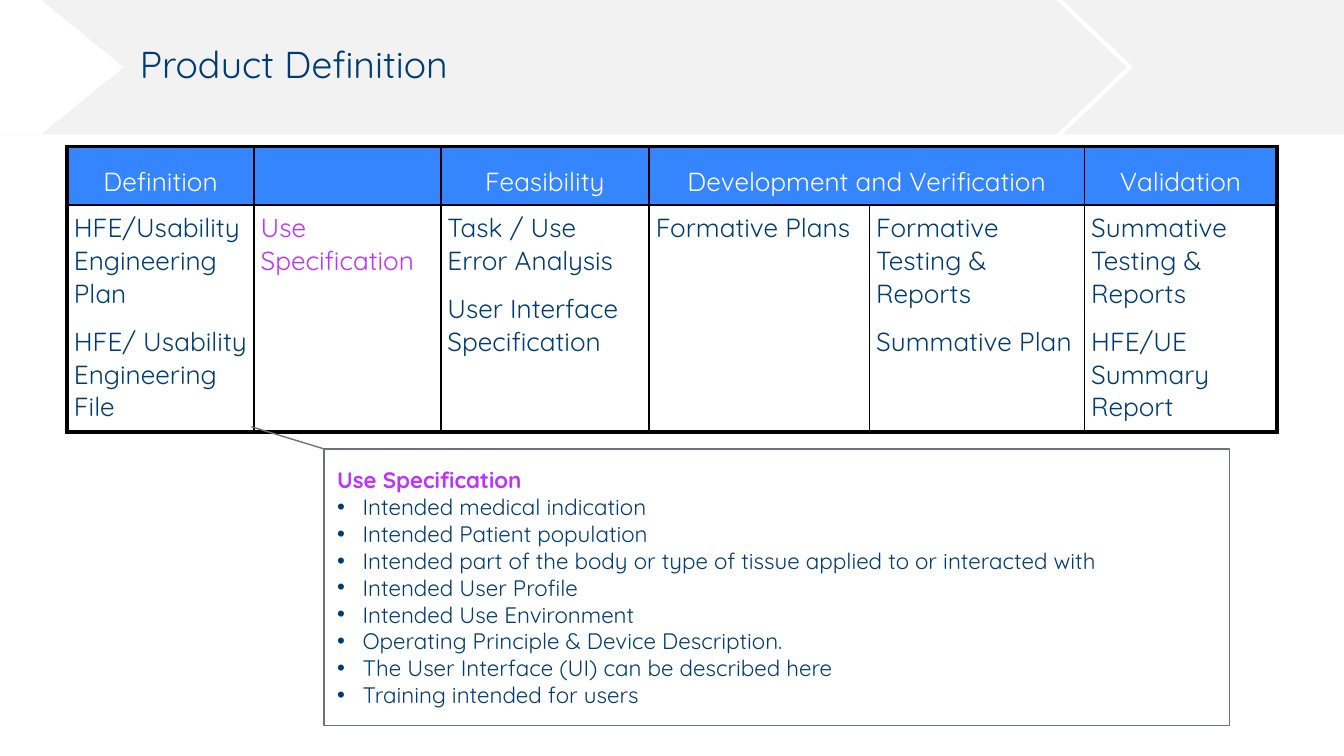
from lxml.etree import SubElement
from pptx import Presentation
from pptx.dml.color import RGBColor
from pptx.enum.shapes import MSO_SHAPE
from pptx.enum.text import MSO_ANCHOR, MSO_AUTO_SIZE, PP_ALIGN
from pptx.oxml import parse_xml
from pptx.oxml.ns import nsdecls, qn
from pptx.util import Inches, Pt

NAVY = RGBColor(0x00, 0x3C, 0x71)
BLUE = RGBColor(0x34, 0x85, 0xFE)
PURPLE = RGBColor(0xBB, 0x33, 0xFF)
GRAY = RGBColor(0x6A, 0x73, 0x7B)
PALE = RGBColor(0xF2, 0xF2, 0xF2)
WHITE = RGBColor(0xFF, 0xFF, 0xFF)
FONT = "Quicksand"

TITLE = "Product Definition"
BANNER = [
    (MSO_SHAPE.RECTANGLE, 0, 10, PALE, []),
    (MSO_SHAPE.CHEVRON, 7.86, 0.57, WHITE, [0.92]),
    (MSO_SHAPE.PENTAGON, 0, 0.92, WHITE, [0.67]),
]
PHASES = [
    (1.39, "Definition", ["HFE/Usability Engineering Plan",
                          "HFE/ Usability Engineering File"]),
    (1.39, "", ["Use Specification"]),
    (1.55, "Feasibility", ["Task / Use Error Analysis",
                           "User Interface Specification"]),
    (1.64, "Development and Verification", ["Formative Plans"]),
    (1.6, "", ["Formative Testing & Reports", "Summative Plan"]),
    (1.43, "Validation", ["Summative Testing & Reports",
                          "HFE/UE Summary Report"]),
]
FOCUS = "Use Specification"
POINTS = [
    "Intended medical indication",
    "Intended Patient population",
    "Intended part of the body or type of tissue applied to or interacted with",
    "Intended User Profile",
    "Intended Use Environment",
    "Operating Principle & Device Description.",
    "The User Interface (UI) can be described here",
    "Training intended for users",
]


def style(para, size, color, bold=False):
    for font in [run.font for run in para.runs] or [para.font]:
        font.name, font.size, font.bold = FONT, Pt(size), bold
        font.color.rgb = color


def add_shape(slide, kind, box, fill, adjust):
    shape = slide.shapes.add_shape(kind, *map(Inches, box))
    shape.shadow.inherit = False
    shape.fill.solid()
    shape.fill.fore_color.rgb = fill
    shape.line.fill.background()
    for i, value in enumerate(adjust):
        shape.adjustments[i] = value
    return shape


def add_edges(cell, row, col):
    props = cell._tc.get_or_add_tcPr()
    outer = [col == 0, col == len(PHASES) - 1, row == 0, row == 1]
    for i, (side, thick) in enumerate(zip("LRTB", outer)):
        width = Pt(2.25 if thick else 1)
        props.insert(i, parse_xml(
            f'<a:ln{side} {nsdecls("a")} w="{width}"><a:solidFill>'
            f'<a:srgbClr val="000000"/></a:solidFill></a:ln{side}>'))


def fill_cell(cell, row, col, lines):
    cell.margin_left = cell.margin_right = Inches(0.05)
    cell.margin_top = cell.margin_bottom = Inches(0.05)
    cell.fill.solid()
    cell.fill.fore_color.rgb = WHITE if row else BLUE
    add_edges(cell, row, col)
    cell.text_frame.text = "\n".join(lines)
    for para in cell.text_frame.paragraphs:
        if row:
            para.space_after = Pt(8.4)
            style(para, 14, PURPLE if para.text == FOCUS else NAVY)
        else:
            para.alignment = PP_ALIGN.CENTER
            para.line_spacing = Pt(24)
            style(para, 14, WHITE)


def add_title(slide):
    title = slide.shapes.title
    title.element.getparent().append(title.element)
    title.left, title.top = Inches(0.94), Inches(0.22)
    title.width, title.height = Inches(8.56), Inches(0.55)
    frame = title.text_frame
    frame.text = TITLE
    frame.auto_size = MSO_AUTO_SIZE.NONE
    frame.vertical_anchor = MSO_ANCHOR.MIDDLE
    para = frame.paragraphs[0]
    para.alignment, para.line_spacing = PP_ALIGN.LEFT, 0.9
    style(para, 20, NAVY)


def add_grid(slide):
    box = map(Inches, (0.5, 1.09, 9, 2.05))
    table = slide.shapes.add_table(2, len(PHASES), *box).table
    table.rows[0].height, table.rows[1].height = Inches(0.36), Inches(1.69)
    for col, (width, head, items) in enumerate(PHASES):
        table.columns[col].width = Inches(width)
        fill_cell(table.cell(0, col), 0, col, [head])
        fill_cell(table.cell(1, col), 1, col, items)
    table.cell(0, 3).merge(table.cell(0, 4))


def add_callout(slide):
    note = add_shape(slide, MSO_SHAPE.LINE_CALLOUT_1, (2.41, 3.34, 6.74, 2.06),
                     WHITE, [0, 0, -0.08, -0.08])
    note.line.color.rgb, note.line.width = GRAY, Pt(0.75)
    frame = note.text_frame
    frame.word_wrap = True
    frame.vertical_anchor = MSO_ANCHOR.MIDDLE
    frame.text = "\n".join([FOCUS, *POINTS])
    indent = Inches(0.19)
    for i, para in enumerate(frame.paragraphs):
        para.alignment = PP_ALIGN.LEFT
        if i:
            props = para._p.get_or_add_pPr()
            props.set("marL", str(indent))
            props.set("indent", str(-indent))
            SubElement(props, qn("a:buFont")).set("typeface", "Arial")
            SubElement(props, qn("a:buChar")).set("char", "•")
        style(para, 12, NAVY if i else PURPLE, bold=i == 0)


def main():
    """Build the product definition slide."""
    deck = Presentation()
    deck.slide_width = Inches(10)
    deck.slide_height = deck.slide_width * 9 // 16
    slide = deck.slides.add_slide(deck.slide_layouts[5])
    for kind, left, width, fill, adjust in BANNER:
        add_shape(slide, kind, (left, 0, width, 1), fill, adjust)
    add_title(slide)
    add_grid(slide)
    add_callout(slide)
    deck.save("out.pptx")


if __name__ == "__main__":
    main()
